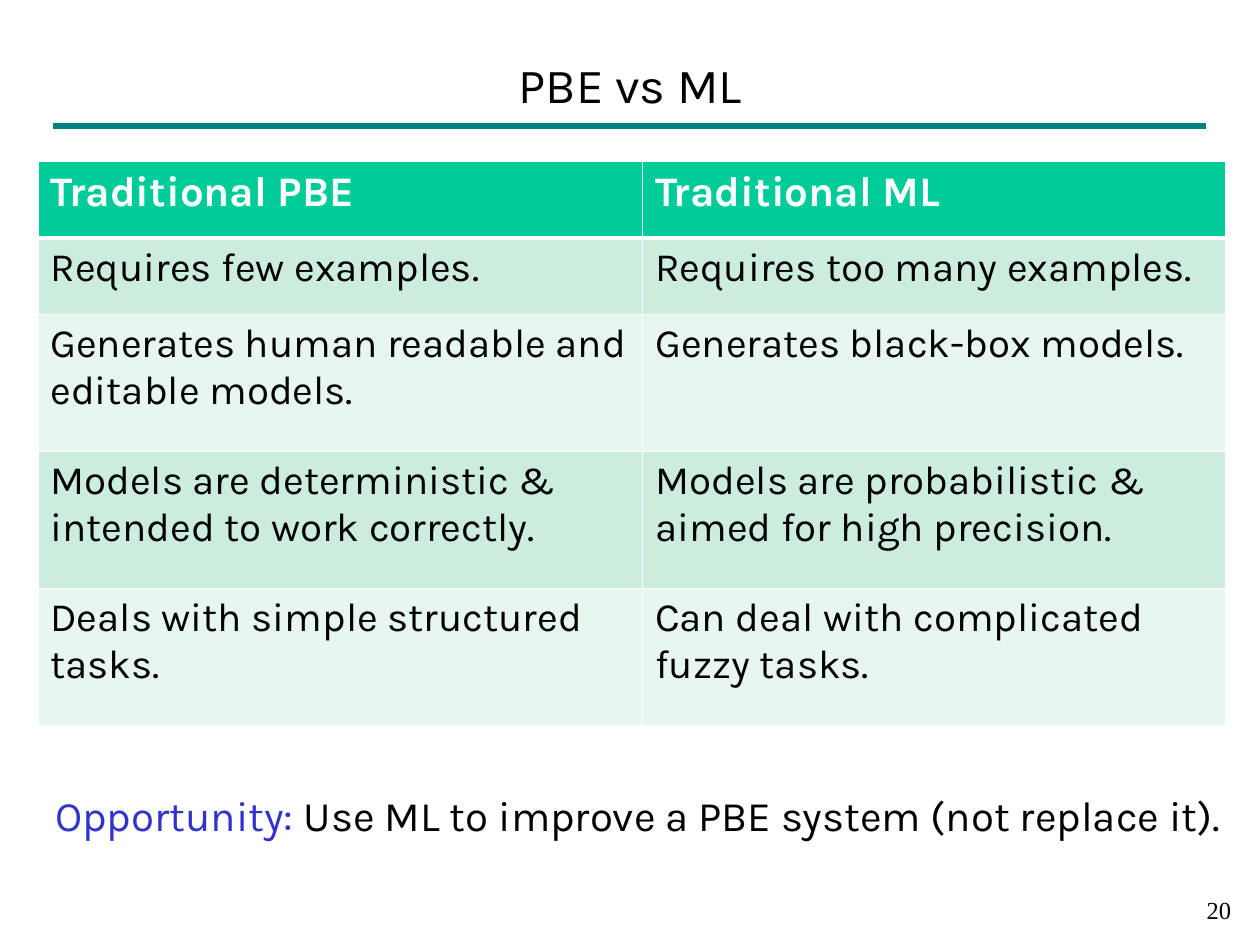
from dataclasses import dataclass

from lxml.etree import SubElement
from pptx import Presentation
from pptx.dml.color import RGBColor
from pptx.enum.shapes import MSO_CONNECTOR
from pptx.enum.text import MSO_ANCHOR, PP_ALIGN
from pptx.oxml.ns import qn
from pptx.util import Inches, Pt

COLUMNS, ROWS = 100, 75
SLIDE_WIDTH, SLIDE_HEIGHT = Inches(10), Inches(7.5)
FONT = "Karla"
BLACK, WHITE, TEAL, BLUE = "000000", "FFFFFF", "008080", "3333CC"
HEADER_FILL, BAND_FILLS = "00CC99", ("CCECDE", "E7F6EF")
COMPARISON = [
    ("Traditional PBE", "Traditional ML"),
    ("Requires few examples.", "Requires too many examples."),
    ("Generates human readable and editable models.", "Generates black-box models."),
    ("Models are deterministic & intended to work correctly.",
     "Models are probabilistic & aimed for high precision."),
    ("Deals with simple structured tasks.", "Can deal with complicated fuzzy tasks."),
]
COLUMN_WEIGHTS = (4.8, 4.63)
ROW_WEIGHTS = (0.61, 0.61, 1.09, 1.09, 1.09)


@dataclass
class Box:
    left: int
    top: int
    width: int
    height: int

    def frame(self):
        return self.left, self.top, self.width, self.height


def grid_box(column, row, columns, rows):
    return Box(int(SLIDE_WIDTH * column / COLUMNS), int(SLIDE_HEIGHT * row / ROWS),
               int(SLIDE_WIDTH * columns / COLUMNS), int(SLIDE_HEIGHT * rows / ROWS))


def color(value):
    return RGBColor.from_string(value)


def style_font(font, size, value, name=FONT, bold=False):
    font.name = name
    font.size = Pt(size)
    font.bold = bold
    font.color.rgb = color(value)


def add_text(page, box, spans, size, name=FONT, align=PP_ALIGN.LEFT, anchor=MSO_ANCHOR.TOP):
    frame = page.shapes.add_textbox(*box.frame()).text_frame
    frame.word_wrap = True
    frame.vertical_anchor = anchor
    para = frame.paragraphs[0]
    para.alignment = align
    style_font(para.font, size, spans[0][1], name)
    for text, value in spans:
        span = para.add_run()
        span.text = text
        style_font(span.font, size, value, name)


def add_rule(page, box):
    rule = page.shapes.add_connector(MSO_CONNECTOR.STRAIGHT, box.left, box.top,
                                     box.left + box.width, box.top + box.height)
    rule.line.color.rgb = color(TEAL)
    rule.line.width = Pt(4)
    SubElement(rule._element.spPr, qn("a:effectLst"))


def add_border(cell, side, points):
    properties = cell._tc.get_or_add_tcPr()
    line = SubElement(properties, qn(f"a:ln{side}"), w=str(Pt(points)))
    fill = SubElement(line, qn("a:solidFill"))
    SubElement(fill, qn("a:srgbClr"), val=WHITE)


def fill_cell(cell, text, row):
    header = row == 0
    widths = {"L": 1, "R": 1, "T": 3 if row == 1 else 1, "B": 3 if header else 1}
    for side, points in widths.items():
        add_border(cell, side, points)
    cell.fill.solid()
    cell.fill.fore_color.rgb = color(HEADER_FILL if header else BAND_FILLS[(row - 1) % 2])
    cell.text = text
    style_font(cell.text_frame.paragraphs[0].font, 24 if header else 23,
               WHITE if header else BLACK, bold=header)


def add_comparison(page, box):
    table = page.shapes.add_table(len(ROW_WEIGHTS), len(COLUMN_WEIGHTS), *box.frame()).table
    for column, weight in zip(table.columns, COLUMN_WEIGHTS):
        column.width = int(box.width * weight / sum(COLUMN_WEIGHTS))
    for row, weight in zip(table.rows, ROW_WEIGHTS):
        row.height = int(box.height * weight / sum(ROW_WEIGHTS))
    for row, texts in enumerate(COMPARISON):
        for column, text in enumerate(texts):
            fill_cell(table.cell(row, column), text, row)


def build_slide(deck):
    page = deck.slides.add_slide(deck.slide_layouts[6])
    page.background.fill.solid()
    page.background.fill.fore_color.rgb = color(WHITE)
    add_rule(page, grid_box(4.2, 10, 91.5, 0))
    add_comparison(page, grid_box(3, 12.8, 94.3, 44.8))
    add_text(page, grid_box(77.9, 70.5, 20.8, 4.2), [("20", BLACK)], 14,
             name="Times New Roman", align=PP_ALIGN.RIGHT)
    add_text(page, grid_box(7.5, 3.3, 85, 6.7), [("PBE vs ML", BLACK)], 28,
             align=PP_ALIGN.CENTER, anchor=MSO_ANCHOR.MIDDLE)
    add_text(page, grid_box(3.4, 62.2, 94.5, 5),
             [("Opportunity: ", BLUE),
              ("Use ML to improve a PBE system (not replace it).", BLACK)], 24)


def main():
    deck = Presentation()
    deck.slide_width, deck.slide_height = SLIDE_WIDTH, SLIDE_HEIGHT
    build_slide(deck)
    deck.save("out.pptx")


if __name__ == "__main__":
    main()
